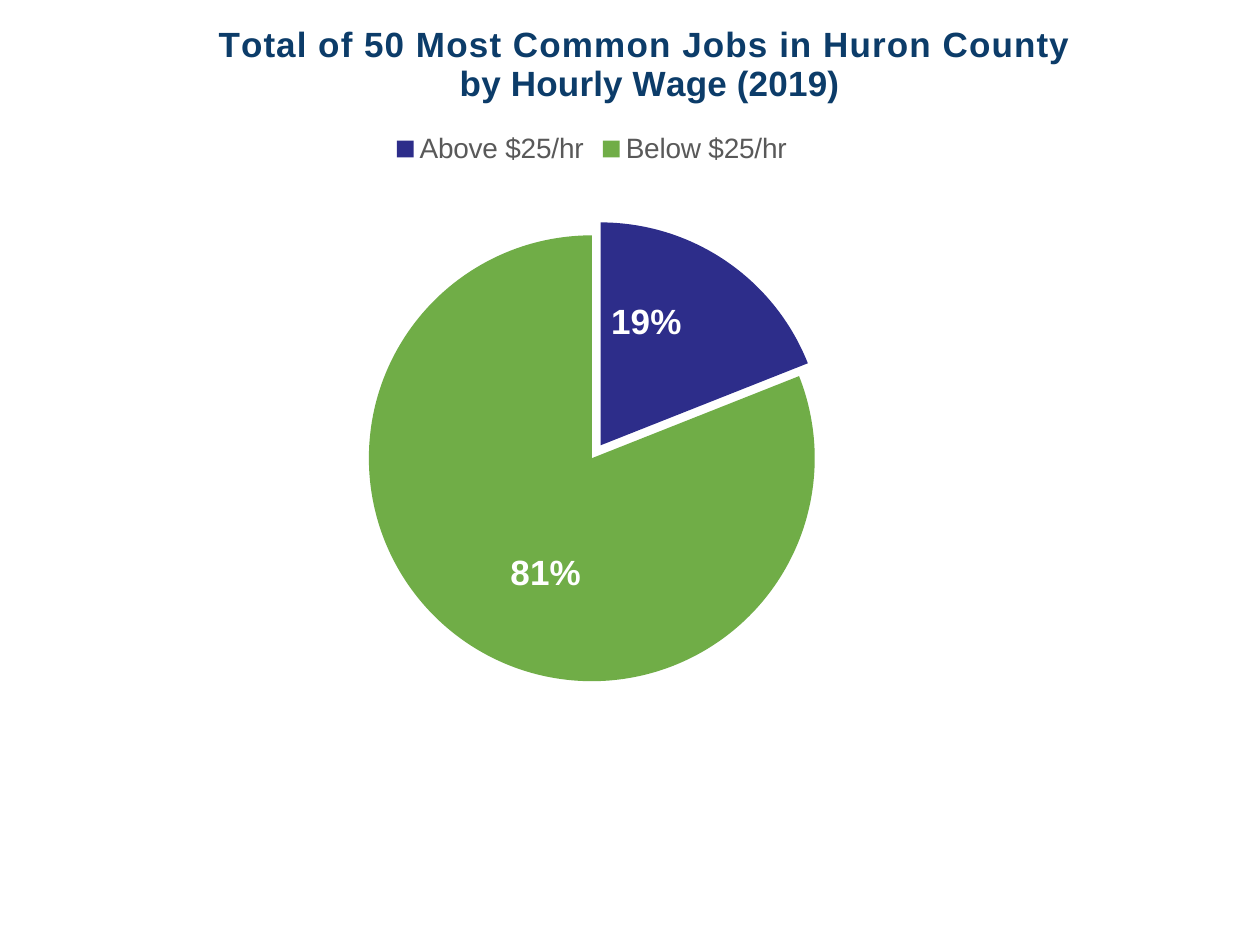
import pptx
import pptx.chart.data
import pptx.dml.color
import pptx.enum.chart
import pptx.enum.text
import pptx.oxml
import pptx.oxml.ns
import pptx.util

Pt = pptx.util.Pt
RGBColor = pptx.dml.color.RGBColor
qn = pptx.oxml.ns.qn

NAVY = RGBColor(0x0C, 0x3C, 0x69)
INDIGO = RGBColor(0x2D, 0x2D, 0x8A)
GREEN = RGBColor(0x70, 0xAD, 0x47)
GRAY = RGBColor(0x59, 0x59, 0x59)
WHITE = RGBColor(0xFF, 0xFF, 0xFF)
BLACK = RGBColor(0, 0, 0)

TITLE_LINES = [
    ("Total of 50 Most Common Jobs in Huron County ", 50),
    ("by Hourly Wage (2019)", 0),
]
WAGE_GROUPS = [
    ("Above $25/hr", 19, INDIGO, {"x": -0.03, "y": 0.05}),
    ("Below $25/hr", 81, GREEN, {"x": 0.03, "y": -0.06}),
]


class WageSlide:
    font_name = "Arial"
    title_format = {"size": Pt(20), "bold": True, "color": NAVY}
    label_format = {"size": Pt(20), "bold": True, "color": WHITE}
    legend_format = {"size": Pt(16), "bold": False, "color": GRAY}
    chart_format = {"size": Pt(10), "color": BLACK}
    edge_modes = {"xMode": "edge", "yMode": "edge"}
    inner_modes = {"layoutTarget": "inner", **edge_modes}

    def __init__(self, presentation):
        self.slide = presentation.slides.add_slide(presentation.slide_layouts[6])

    def apply_font(self, font, values):
        font.name = self.font_name
        for name, value in values.items():
            if name == "color":
                font.color.rgb = value
            else:
                setattr(font, name, value)

    def place(self, parent, values, anchor=None):
        for layout in parent.findall(qn("c:layout")):
            parent.remove(layout)
        content = "".join(
            f'<c:{name} val="{value}"/>' for name, value in values.items()
        )
        layout = pptx.oxml.parse_xml(
            f'<c:layout {pptx.oxml.ns.nsdecls("c")}>'
            f"<c:manualLayout>{content}</c:manualLayout></c:layout>"
        )
        if anchor:
            parent.find(qn(anchor)).addnext(layout)
        else:
            parent.insert(0, layout)

    def add_pie(self, left, top, width, height, groups):
        data = pptx.chart.data.CategoryChartData()
        data.categories = [group[0] for group in groups]
        data.add_series("Series 1", [group[1] for group in groups])
        chart = self.slide.shapes.add_chart(
            pptx.enum.chart.XL_CHART_TYPE.PIE,
            Pt(left), Pt(top), Pt(width), Pt(height), data,
        ).chart
        self.apply_font(chart.font, self.chart_format)
        chart.plots[0].vary_by_categories = True
        plot_area = chart.element.find(".//" + qn("c:plotArea"))
        frame = {"x": 0.32, "y": 0.32, "w": 0.35, "h": 0.62}
        self.place(plot_area, {**self.inner_modes, **frame})
        return chart

    def add_title(self, chart, lines):
        frame = chart.chart_title.text_frame
        for index, (text, spacing) in enumerate(lines):
            paragraph = frame.add_paragraph() if index else frame.paragraphs[0]
            paragraph.alignment = pptx.enum.text.PP_ALIGN.CENTER
            run = paragraph.add_run()
            run.text = text
            self.apply_font(run.font, self.title_format)
            run.font._element.set("spc", str(spacing))
        title = chart.element.find(".//" + qn("c:title"))
        self.place(title, {**self.edge_modes, "x": 0.21, "y": 0.02}, "c:tx")

    def add_legend(self, chart):
        chart.has_legend = True
        legend = chart.legend
        legend.position = pptx.enum.chart.XL_LEGEND_POSITION.TOP
        legend.include_in_layout = False
        self.apply_font(legend.font, self.legend_format)
        element = chart.element.find(".//" + qn("c:legend"))
        frame = {"x": 0.34, "y": 0.15, "w": 0.31, "h": 0.1}
        self.place(element, {**self.edge_modes, **frame}, "c:legendPos")

    def style_slices(self, chart, groups):
        series = chart.plots[0].series[0]
        for index, (_, _, color, offset) in enumerate(groups):
            point = series.points[index]
            point.format.fill.solid()
            point.format.fill.fore_color.rgb = color
            label = point.data_label
            self.apply_font(label.font, self.label_format)
            label.position = pptx.enum.chart.XL_LABEL_POSITION.INSIDE_END
            element = chart.element.findall(".//" + qn("c:dLbl"))[index]
            element.find(qn("c:showVal")).set("val", "0")
            element.find(qn("c:showPercent")).set("val", "1")
            self.place(element, offset, "c:idx")
        explosion = pptx.oxml.parse_xml(
            f'<c:explosion {pptx.oxml.ns.nsdecls("c")} val="7"/>'
        )
        first_slice = chart.element.find(".//" + qn("c:dPt"))
        first_slice.find(qn("c:spPr")).addprevious(explosion)


def main():
    presentation = pptx.Presentation()
    presentation.slide_width = Pt(720)
    presentation.slide_height = Pt(540)
    wage_slide = WageSlide(presentation)
    chart = wage_slide.add_pie(-36, 3, 756, 411, WAGE_GROUPS)
    wage_slide.add_title(chart, TITLE_LINES)
    wage_slide.add_legend(chart)
    wage_slide.style_slices(chart, WAGE_GROUPS)
    presentation.save("out.pptx")


if __name__ == "__main__":
    main()
